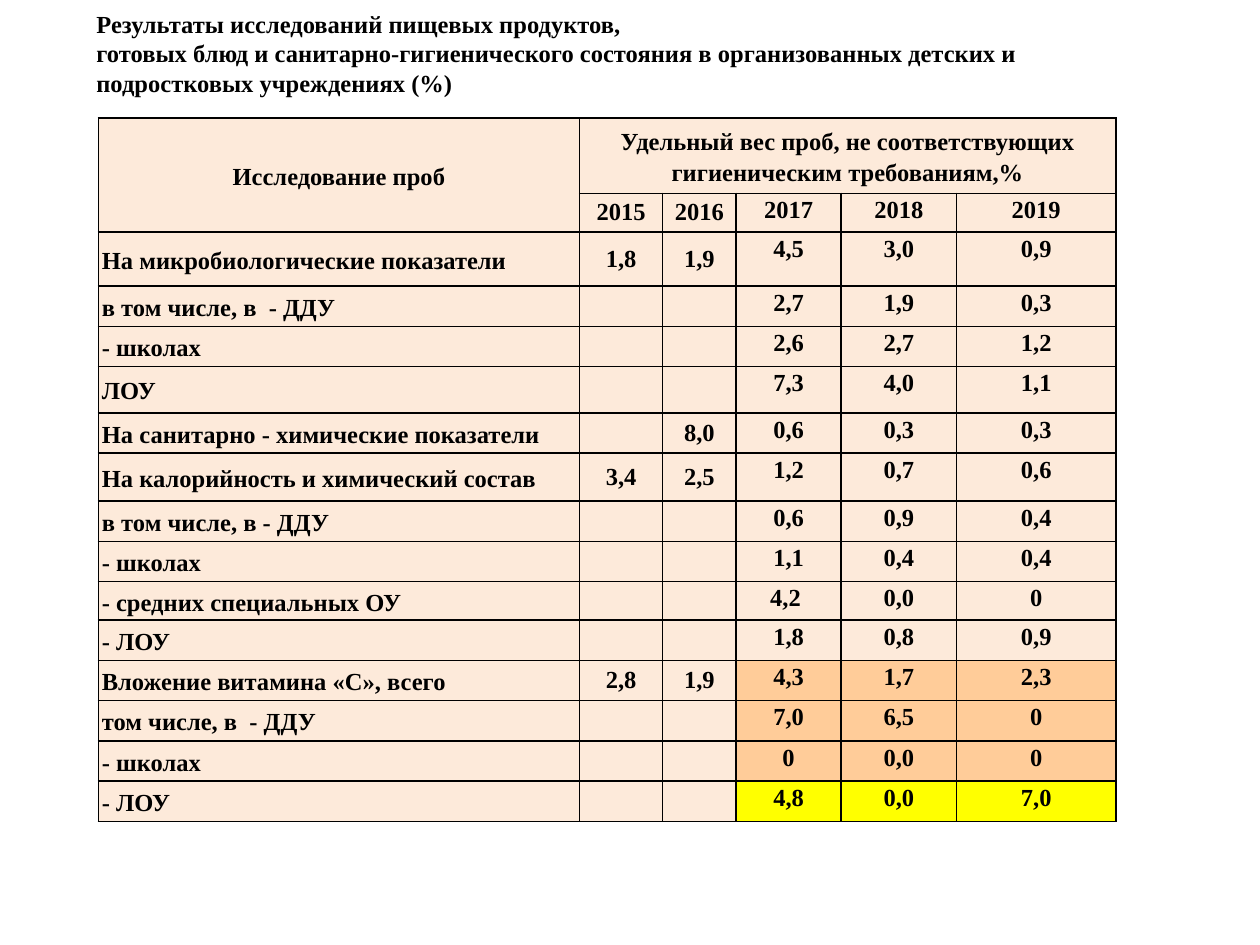
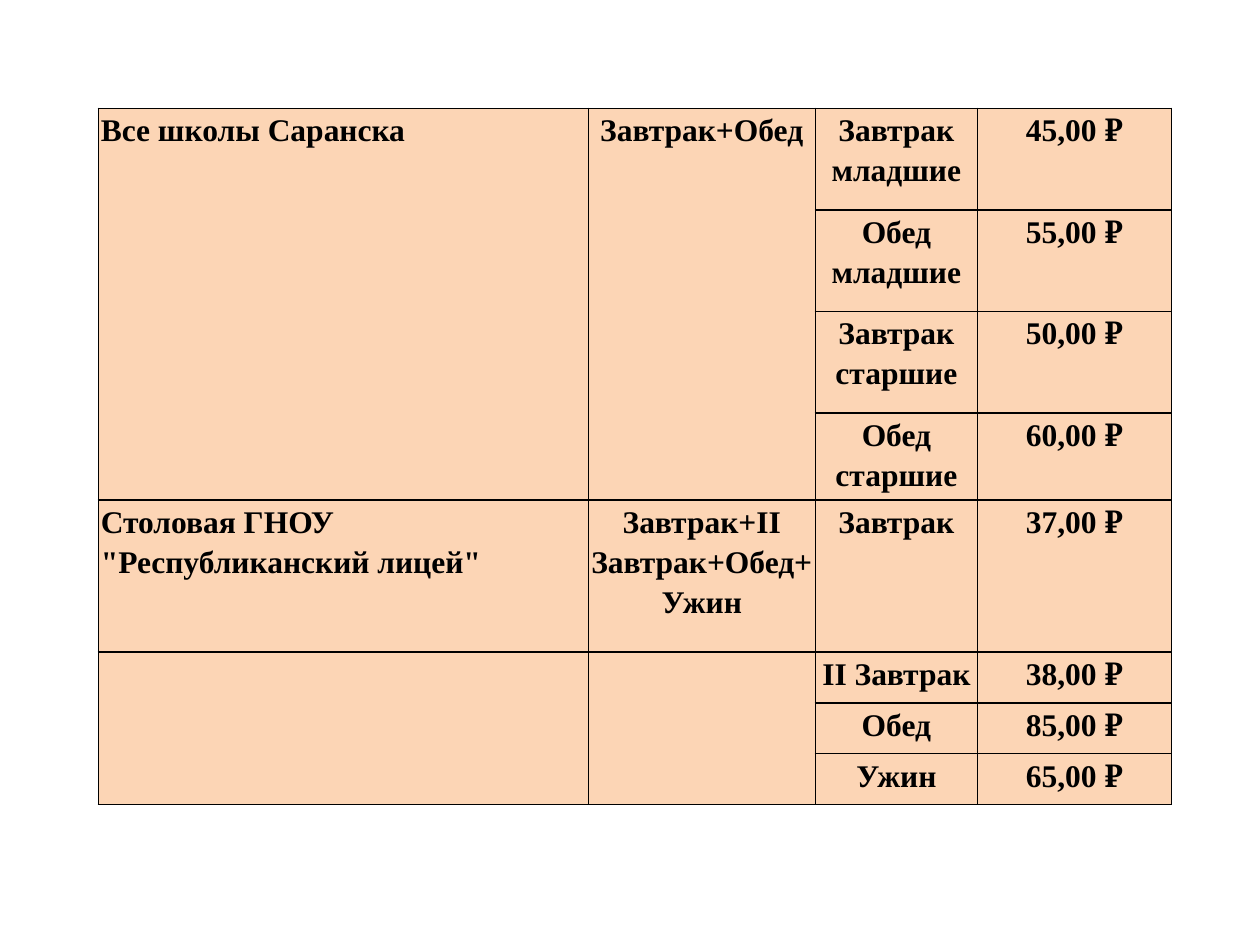
from lxml.etree import SubElement
from pptx import Presentation
from pptx.dml.color import RGBColor
from pptx.enum.text import MSO_ANCHOR, PP_ALIGN
from pptx.oxml.ns import qn
from pptx.util import Pt

FONT = "Times New Roman"
BLACK = RGBColor(0, 0, 0)
PALE = RGBColor(0xFD, 0xEA, 0xDA)
PEACH = RGBColor(0xFF, 0xCC, 0x99)
SAND = RGBColor(0xFC, 0xD5, 0xB5)
YELLOW = RGBColor(0xFF, 0xFF, 0)
NO_GRID = "{2D5ABB26-0587-4C30-8999-92F81FD0307C}"
MID, TOP = MSO_ANCHOR.MIDDLE, MSO_ANCHOR.TOP
LEFT, CENTER = PP_ALIGN.LEFT, PP_ALIGN.CENTER

TITLE = (
    "Результаты исследований пищевых продуктов,",
    "готовых блюд и санитарно-гигиенического состояния в организованных детских и "
    "подростковых учреждениях (%)",
)
TESTS = (
    ("Исследование проб",
     "Удельный вес проб, не соответствующих гигиеническим требованиям,%", "", "", "", ""),
    ("", "2015", "2016", "2017", "2018", "2019"),
    ("На микробиологические показатели", "1,8", "1,9", "4,5", "3,0", "0,9"),
    ("в том числе, в  - ДДУ", "", "", "2,7", "1,9", "0,3"),
    ("- школах", "", "", "2,6", "2,7", "1,2"),
    ("ЛОУ", "", "", "7,3", "4,0", "1,1"),
    ("На санитарно - химические показатели", "", "8,0", "0,6", "0,3", "0,3"),
    ("На калорийность и химический состав", "3,4", "2,5", "1,2", "0,7", "0,6"),
    ("в том числе, в - ДДУ", "", "", "0,6", "0,9", "0,4"),
    ("- школах", "", "", "1,1", "0,4", "0,4"),
    ("- средних специальных ОУ", "", "", "4,2 ", "0,0", "0"),
    ("- ЛОУ", "", "", "1,8", "0,8", "0,9"),
    ("Вложение витамина «С», всего", "2,8", "1,9", "4,3", "1,7", "2,3"),
    ("том числе, в  - ДДУ", "", "", "7,0", "6,5", "0"),
    ("- школах", "", "", "0", "0,0", "0"),
    ("- ЛОУ", "", "", "4,8", "0,0", "7,0"),
)
MEALS = (
    ("Все школы Саранска", "Завтрак+Обед", "Завтрак младшие", "45,00 ₽"),
    ("", "", "Обед младшие", "55,00 ₽"),
    ("", "", "Завтрак старшие", "50,00 ₽"),
    ("", "", "Обед старшие", "60,00 ₽"),
    ('Столовая ГНОУ "Республиканский лицей"', "Завтрак+II Завтрак+Обед+Ужин",
     "Завтрак", "37,00 ₽"),
    ("", "", "II Завтрак", "38,00 ₽"),
    ("", "", "Обед", "85,00 ₽"),
    ("", "", "Ужин", "65,00 ₽"),
)


def assign(item, form):
    """Set each attribute named in a dict of format values."""
    for name, value in form.items():
        setattr(item, name, value)


def write(para, text, size):
    """Put bold text in a paragraph, or size the paragraph if it is empty."""
    if not text:
        SubElement(para._p, qn("a:endParaRPr"), sz=str(size * 100))
        return
    run = para.add_run()
    run.text = text
    assign(run.font, {"name": FONT, "size": Pt(size), "bold": True})
    run.font.color.rgb = BLACK


def edge(cell, sides):
    """Draw thin black borders on the given sides of a cell."""
    props = cell._tc.get_or_add_tcPr()
    for side in sides:
        line = SubElement(props, qn("a:ln" + side), w=str(Pt(1)))
        paint = SubElement(line, qn("a:solidFill"))
        SubElement(paint, qn("a:srgbClr"), val=str(BLACK))


def grid(slide, spot, cols, rows, data, size, pad, style):
    """Add a table whose cells take fill, sides and format from a style rule."""
    frame = slide.shapes.add_table(len(rows), len(cols), *map(Pt, spot),
                                   Pt(sum(cols)), Pt(sum(rows)))
    table = frame.table
    assign(table, {"first_row": False, "horz_banding": False})
    table._tbl.tblPr.find(qn("a:tableStyleId")).text = NO_GRID
    for col, width in zip(table.columns, cols):
        col.width = Pt(width)
    for row, height in zip(table.rows, rows):
        row.height = Pt(height)
    for r, texts in enumerate(data):
        for c, text in enumerate(texts):
            cell = table.cell(r, c)
            color, sides, anchor, para = style(r, c)
            edge(cell, sides)
            cell.fill.solid()
            cell.fill.fore_color.rgb = color
            assign(cell, {"vertical_anchor": anchor, **pad})
            assign(cell.text_frame.paragraphs[0], para)
            write(cell.text_frame.paragraphs[0], text, size)
    return table


def test_style(r, c):
    """Give the look of one cell in the table of test results."""
    color = PALE
    if c > 2 and r > 11:
        color = YELLOW if r == len(TESTS) - 1 else PEACH
    head = r == 0
    para = {"alignment": LEFT if c == 0 and not head else CENTER,
            "line_spacing": 1.15 if head or c == 0 else 1.0}
    return color, "LRTB", MID if head or c < 3 else TOP, para


def meal_style(r, c):
    """Give the look of one cell in the table of meal prices."""
    sides = "LRTB"
    if c < 2:
        sides = "LR" + {0: "T", 3: "B"}.get(r % 4, "")
    return SAND, sides, TOP, {"alignment": CENTER if c else LEFT, "line_spacing": 1.15}


def inset(side, level):
    """Make a dict of cell margins."""
    return {"margin_left": Pt(side), "margin_right": Pt(side),
            "margin_top": Pt(level), "margin_bottom": Pt(level)}


def heading(slide, lines):
    """Add the bold heading above a table."""
    box = slide.shapes.add_textbox(Pt(48), Pt(1.5), Pt(624), Pt(96))
    frame = box.text_frame
    assign(frame, {"word_wrap": True, "vertical_anchor": TOP})
    for i, line in enumerate(lines):
        write(frame.add_paragraph() if i else frame.paragraphs[0], line, 14)


def main():
    """Build both slides and save them."""
    deck = Presentation()
    assign(deck, {"slide_width": Pt(720), "slide_height": Pt(540)})
    blank = deck.slide_layouts[6]

    slide = deck.slides.add_slide(blank)
    cols = (275, 47.5, 42, 60, 66, 91)
    rows = [43, 22, 31, 23, 23, 26.5, 23, 27.5, 23, 23, 22] + [23] * 5
    table = grid(slide, (56.2, 67.5), cols, rows, TESTS, 14, inset(2, 2), test_style)
    table.cell(0, 0).merge(table.cell(1, 0))
    table.cell(0, 1).merge(table.cell(0, 5))
    heading(slide, TITLE)

    slide = deck.slides.add_slide(blank)
    rows = [58] * 3 + [29, 87] + [29] * 3
    grid(slide, (56.2, 62), (280, 129.7, 92.7, 111), rows, MEALS, 18,
         inset(1.4, 0), meal_style)
    deck.save("out.pptx")


if __name__ == "__main__":
    main()
